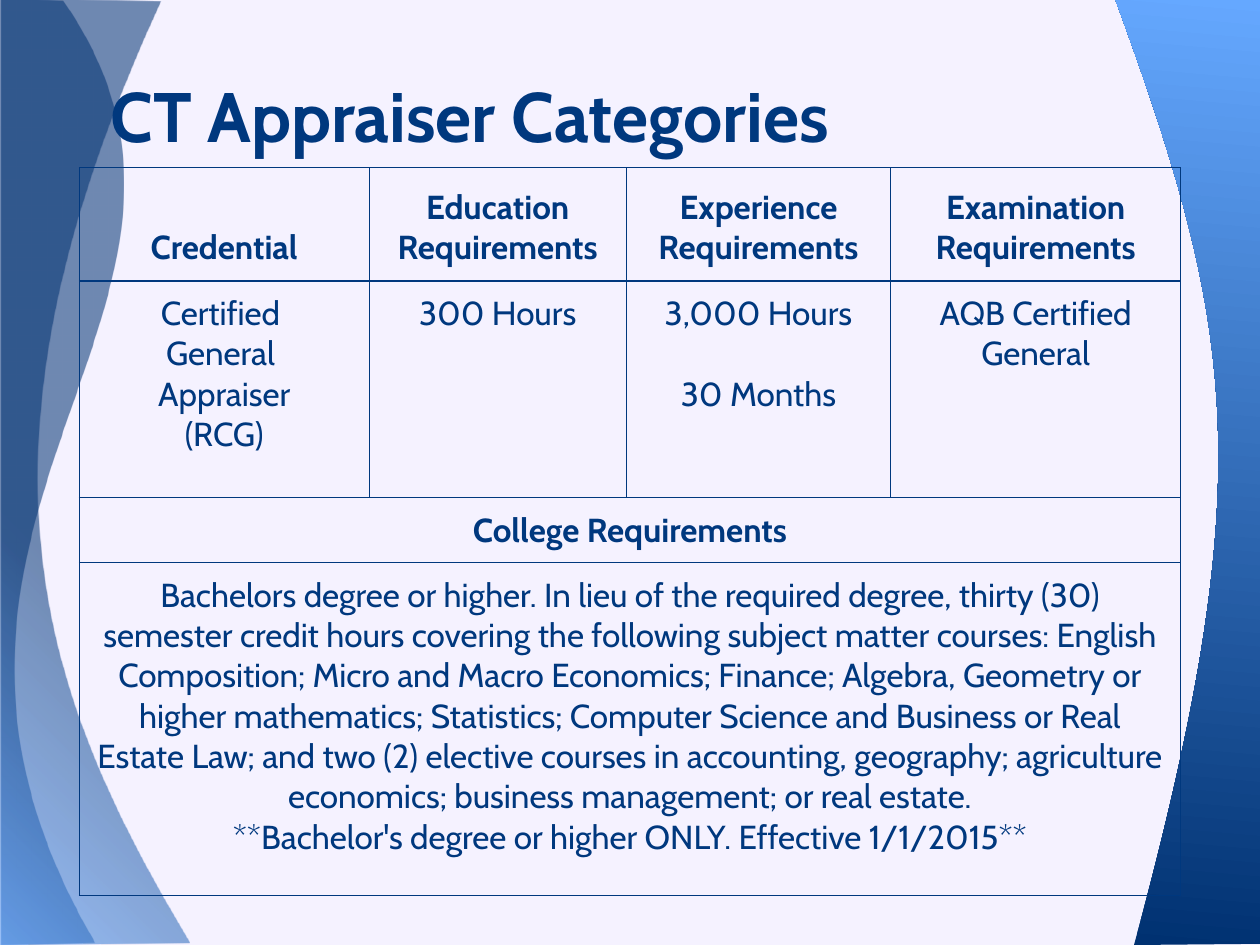
from lxml.etree import SubElement
from pptx import Presentation
from pptx.dml.color import RGBColor
from pptx.enum.text import MSO_ANCHOR, PP_ALIGN
from pptx.oxml import parse_xml
from pptx.oxml.ns import nsdecls, qn
from pptx.util import Inches, Pt

NAVY = "00387E"
FONT = "Cabin"
GLOW_STOPS = [(0, "549FFF", 54), (41, "003171", 54), (100, "003171", 54)]
GLOW_SHADE = ('<a:path path="circle"><a:fillToRect l="0" t="100000" '
              'r="100000" b="0"/></a:path>')
RIGHT_STOPS = [(0, "003171", 100), (100, "65A8FF", 100)]
RIGHT_SHADE = '<a:lin ang="5700000" scaled="0"/>'


def color(hex_text):
    return RGBColor.from_string(hex_text)


class SlideBuilder:
    def __init__(self, slide):
        self.slide = slide

    def background(self, hex_text):
        fill = self.slide.background.fill
        fill.solid()
        fill.fore_color.rgb = color(hex_text)

    def wave(self, start, segments, stops, shade):
        """A half-turned outline; one point is a line, three are a curve."""
        points = [start] + [point for segment in segments for point in segment]
        across, down = (min(values) + max(values) for values in zip(*points))
        turned = [(Inches(across - x), Inches(down - y)) for x, y in points]
        builder = self.slide.shapes.build_freeform(*turned[0])
        builder.add_line_segments(turned[1:], close=True)
        shape = builder.convert_to_shape()
        shape.rotation = 180
        shape.shadow.inherit = False
        shape.line.fill.background()

        # Join each three points of a curve into one cubic segment
        lines = iter(list(shape._element.iter(qn("a:lnTo"))))
        for segment in segments:
            parts = [next(lines) for _ in segment]
            if len(parts) == 3:
                cubic = parse_xml(f'<a:cubicBezTo {nsdecls("a")}/>')
                parts[0].addprevious(cubic)
                for part in parts:
                    cubic.append(part[0])
                    part.getparent().remove(part)

        stop_xml = "".join(
            f'<a:gs pos="{position * 1000}"><a:srgbClr val="{hex_text}">'
            f'<a:alpha val="{alpha * 1000}"/></a:srgbClr></a:gs>'
            for position, hex_text, alpha in stops)
        gradient = parse_xml(f'<a:gradFill {nsdecls("a")} rotWithShape="1">'
                             f'<a:gsLst>{stop_xml}</a:gsLst>{shade}</a:gradFill>')
        shape._element.spPr.find(qn("a:custGeom")).addnext(gradient)

    def style(self, para, size, bold):
        for span in para.runs:
            span.font.name = FONT
            span.font.size = Pt(size)
            span.font.bold = bold
            span.font.color.rgb = color(NAVY)

    def title(self, text, left, top, width, height):
        box = self.slide.shapes.add_textbox(
            Inches(left), Inches(top), Inches(width), Inches(height))
        frame = box.text_frame
        frame.word_wrap = True
        frame.vertical_anchor = MSO_ANCHOR.BOTTOM
        frame.margin_left = frame.margin_right = Inches(0.1)
        frame.margin_top = frame.margin_bottom = Inches(0.1)
        frame.text = text
        para = frame.paragraphs[0]
        para._p.get_or_add_pPr().set("indent", str(Inches(0.28)))
        self.style(para, 40, True)

    def border(self, cell):
        properties = cell._tc.get_or_add_tcPr()
        for side in ("a:lnL", "a:lnR", "a:lnT", "a:lnB"):
            line = SubElement(properties, qn(side), w=str(Pt(0.75)))
            fill = SubElement(line, qn("a:solidFill"))
            SubElement(fill, qn("a:srgbClr"), val=NAVY)

    def table(self, left, top, columns, heights, rows, header_anchor):
        """The first row is the bold header."""
        frame = self.slide.shapes.add_table(
            len(rows), len(columns), Inches(left), Inches(top),
            Inches(sum(columns)), Inches(sum(heights)))
        table = frame.table
        table.first_row = table.horz_banding = False
        for column, width in zip(table.columns, columns):
            column.width = Inches(width)
        for index, (row, height) in enumerate(zip(rows, heights)):
            table.rows[index].height = Inches(height)
            for cell, text in zip(table.rows[index].cells, row):
                cell.margin_left = cell.margin_right = Inches(0.1)
                cell.margin_top = cell.margin_bottom = Inches(0.1)
                cell.vertical_anchor = header_anchor if index == 0 else MSO_ANCHOR.TOP
                self.border(cell)
                cell.fill.background()
                cell.text_frame.text = text
                for para in cell.text_frame.paragraphs:
                    para.alignment = PP_ALIGN.CENTER
                    self.style(para, 19, index == 0)
        return table


def main():
    deck = Presentation()
    deck.slide_width, deck.slide_height = Inches(10), Inches(7.5)
    page = SlideBuilder(deck.slides.add_slide(deck.slide_layouts[6]))
    page.background("F5F2FF")

    # Curved bands at the left and right edges
    page.wave((1.5, 7.48), [
        [(-0.01, 7.5)],
        [(-0.01, 5), (0, 2.5), (0, -0.01)],
        [(1.27, 0.01)],
        [(-0.38, 3.63), (0.33, 5.51), (1.5, 7.48)],
    ], GLOW_STOPS, GLOW_SHADE)
    page.wave((0.75, 7.48), [
        [(0.01, 7.5)],
        [(0.01, 5), (0.01, 2.5), (0.01, -0.01)],
        [(0.5, 0.01)],
        [(2.17, 2.43), (-1.22, 4.1), (0.75, 7.48)],
    ], GLOW_STOPS, GLOW_SHADE)
    page.wave((10.05, 7.49), [
        [(9, 7.5)],
        [(10.01, 3.79), (9.81, 2.61), (8.85, -0.01)],
        [(10.05, -0.01)],
        [(10.05, 7.49)],
    ], RIGHT_STOPS, RIGHT_SHADE)

    # Title
    page.title("CT Appraiser Categories", 0.5, -0.11, 9, 1.45)

    # College requirements
    page.table(0.63, 3.95, [8.74], [0.48, 2.64], [
        ["College Requirements"],
        ["Bachelors degree or higher. In lieu of the required degree, thirty (30) "
         "semester credit hours covering the following subject matter courses: "
         "English Composition; Micro and Macro Economics; Finance; Algebra, "
         "Geometry or higher mathematics; Statistics; Computer Science and "
         "Business or Real Estate Law; and two (2) elective courses in accounting, "
         "geography; agriculture economics; business management; or real estate.\n"
         "**Bachelor's degree or higher ONLY. Effective 1/1/2015**"],
    ], MSO_ANCHOR.TOP)

    # Credential requirements
    credentials = page.table(0.63, 1.33, [2.3, 2.04, 2.1, 2.3], [0.9, 1.72], [
        ["Credential", "Education Requirements", "Experience Requirements",
         "Examination Requirements"],
        ["Certified \nGeneral \nAppraiser\n(RCG)", "300 Hours",
         "3,000 Hours\n30 Months", "AQB Certified General"],
    ], MSO_ANCHOR.BOTTOM)
    months = credentials.cell(1, 2).text_frame.paragraphs[1]
    months.space_before = Pt(23)

    deck.save("out.pptx")


if __name__ == "__main__":
    main()
